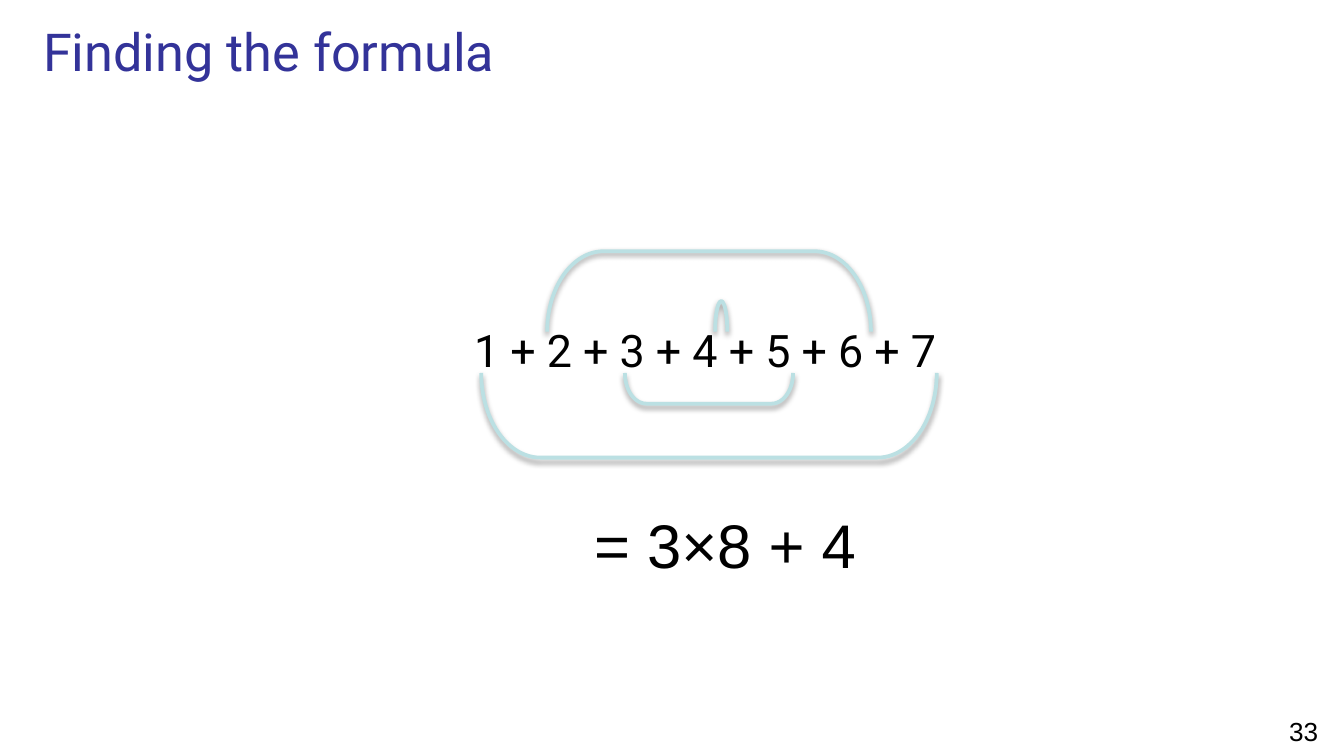
from dataclasses import dataclass

from lxml.etree import SubElement
from pptx import Presentation
from pptx.dml.color import RGBColor
from pptx.enum.shapes import MSO_SHAPE
from pptx.enum.text import MSO_ANCHOR, PP_ALIGN
from pptx.oxml.ns import qn
from pptx.shapes.base import BaseShape
from pptx.slide import Slide
from pptx.text.text import TextFrame
from pptx.util import Cm, Pt

COLOURS = {"title": "333399", "text": "000000", "bracket": "BBE0E3", "shadow": "000000"}
TOP_EDGE = 6.27
BOTTOM_EDGE = 7.05


@dataclass
class Label:
    text: str
    left: float
    top: float
    width: float
    height: float
    size: float
    font: str
    align: PP_ALIGN = PP_ALIGN.CENTER
    colour: str = "text"
    anchor: MSO_ANCHOR = MSO_ANCHOR.TOP


@dataclass
class PairBracket:
    centre: float
    span: float
    depth: float
    above: bool


TITLE = Label("Finding the formula", 0.56, 0.2, 24.74, 1.5, 28, "Roboto",
              PP_ALIGN.LEFT, "title", MSO_ANCHOR.MIDDLE)
LABELS = [
    Label("33", 23.88, 13.39, 1.52, 0.76, 14, "Arial"),
    Label("1 + 2 + 3 + 4 + 5 + 6 + 7", 8.71, 5.97, 12.62, 1.35, 24, "Roboto", PP_ALIGN.LEFT),
    Label("= 3×8 + 4", 10.62, 9.45, 6.17, 1.68, 33, "Arial"),
]
BRACKETS = [
    PairBracket(13.63, 0.23, 0.58, True),
    PairBracket(13.4, 3.18, 0.58, False),
    PairBracket(13.4, 6.12, 1.52, True),
    PairBracket(13.4, 8.61, 1.6, False),
]


def place(box: BaseShape, label: Label) -> None:
    box.left, box.top = Cm(label.left), Cm(label.top)
    box.width, box.height = Cm(label.width), Cm(label.height)


def write(frame: TextFrame, label: Label) -> None:
    frame.word_wrap = True
    frame.vertical_anchor = label.anchor
    para = frame.paragraphs[0]
    para.alignment = label.align
    span = para.add_run()
    span.text = label.text
    span.font.size = Pt(label.size)
    span.font.name = label.font
    span.font.color.rgb = RGBColor.from_string(COLOURS[label.colour])


def add_label(page: Slide, label: Label) -> None:
    box = page.shapes.add_textbox(0, 0, 0, 0)
    place(box, label)
    write(box.text_frame, label)


def add_shadow(shape: BaseShape) -> None:
    shape.shadow.inherit = False
    effects = shape._element.spPr.find(qn("a:effectLst"))
    shadow = SubElement(effects, qn("a:outerShdw"), blurRad=str(Pt(3.1)),
                        dist=str(Pt(1.6)), dir="5400000", rotWithShape="0")
    colour = SubElement(shadow, qn("a:srgbClr"), val=COLOURS["shadow"])
    SubElement(colour, qn("a:alpha"), val="38000")


def add_bracket(page: Slide, pair: PairBracket) -> None:
    half = pair.depth / 2
    middle = TOP_EDGE - half if pair.above else BOTTOM_EDGE + half
    shape = page.shapes.add_shape(
        MSO_SHAPE.LEFT_BRACKET, Cm(pair.centre - half), Cm(middle - pair.span / 2),
        Cm(pair.depth), Cm(pair.span))
    shape.rotation = 90 if pair.above else 270
    shape.adjustments[0] = 0.7
    shape.fill.background()
    shape.line.color.rgb = RGBColor.from_string(COLOURS["bracket"])
    shape.line.width = Pt(2)
    add_shadow(shape)


def main() -> None:
    deck = Presentation()
    deck.slide_width, deck.slide_height = Cm(25.4), Cm(14.29)
    page = deck.slides.add_slide(deck.slide_layouts[5])
    title = page.shapes.title
    place(title, TITLE)
    write(title.text_frame, TITLE)
    for label in LABELS:
        add_label(page, label)
    for pair in BRACKETS:
        add_bracket(page, pair)
    deck.save("out.pptx")


if __name__ == "__main__":
    main()
